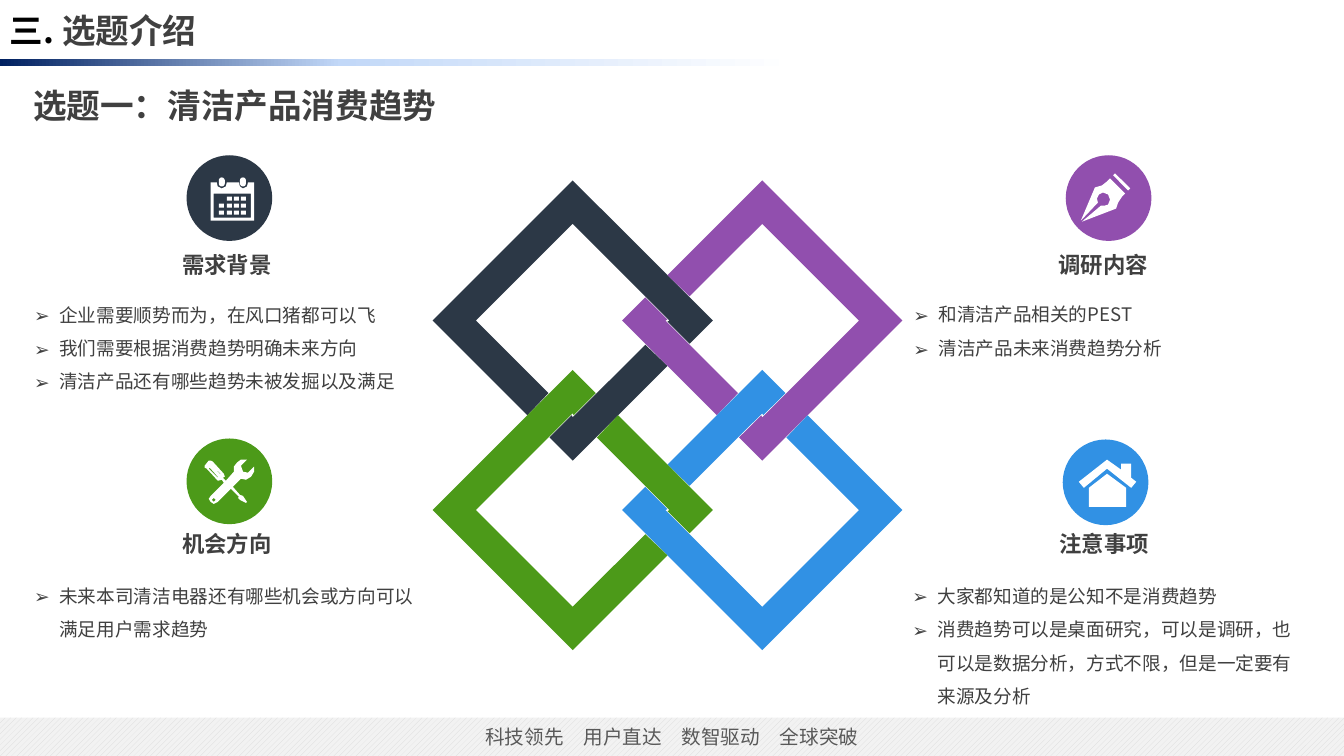
import copy
import lxml.etree
import pptx
import pptx.dml.color
import pptx.enum.dml
import pptx.enum.shapes
import pptx.enum.text
import pptx.oxml.ns
import pptx.util

Inches = pptx.util.Inches
SHAPE = pptx.enum.shapes.MSO_SHAPE
ALIGN = pptx.enum.text.PP_ALIGN
qn = pptx.oxml.ns.qn
FONT = "Noto Sans CJK SC"
COLORS = {
    "navy": "2C3846", "purple": "914FAE", "blue": "3191E4", "green": "4C9A19",
    "white": "FFFFFF", "black": "000000", "text": "404040", "footer": "595959",
    "hatch": "D9D9D9", "footer_bg": "F2F2F2", "bar_dark": "002060", "bar_light": "C2D8F8",
}

# Content
TITLE = [("三. ", "black"), ("选题介绍", "text")]
SUBTITLE = "选题一：清洁产品消费趋势"
FOOTER = "科技领先　用户直达　数智驱动　全球突破"
BAR_STOPS = [(0, "bar_dark"), (43, "bar_light"), (100, "white")]

# Heading, colour, badge (left, top), heading (left, top), list (left, top, height), bullets
TOPICS = [
    ("需求背景", "navy", (1.85, 1.54), (1.71, 2.44), (0.24, 2.85, 1.11),
     ["企业需要顺势而为，在风口猪都可以飞", "我们需要根据消费趋势明确未来方向",
      "清洁产品还有哪些趋势未被发掘以及满足"]),
    ("调研内容", "purple", (10.57, 1.54), (10.4, 2.44), (8.96, 2.85, 0.77),
     ["和清洁产品相关的PEST", "清洁产品未来消费趋势分析"]),
    ("机会方向", "green", (1.85, 4.35), (1.71, 5.21), (0.24, 5.64, 0.77),
     ["未来本司清洁电器还有哪些机会或方向可以满足用户需求趋势"]),
    ("注意事项", "blue", (10.54, 4.36), (10.41, 5.21), (8.95, 5.64, 1.45),
     ["大家都知道的是公知不是消费趋势",
      "消费趋势可以是桌面研究，可以是调研，也可以是数据分析，方式不限，但是一定要有来源及分析"]),
]

# Interlocked diamonds: colour, centre, corner (N, E, S, W = 0..3) where the first gap lies
RINGS = [("navy", (5.68, 3.18), 1), ("purple", (7.56, 3.18), 2),
         ("blue", (7.56, 5.06), 3), ("green", (5.68, 5.06), 0)]
CORNERS = [(0, -1), (1, 0), (0, 1), (-1, 0)]
OUTER, INNER = 1.39, 0.96
# Band ends beside a gap: weights of the two corners for the outer and inner edge
NEAR = [(1.16, 0.23), (0.94, 0.01)]
FAR = [(0.94, 0.45), (0.72, 0.24)]

# Icon outlines, each a list of contours
PEN = [
    [[(11.1, 1.86), (11.07, 1.83), (11.01, 1.77), (10.98, 1.8), (10.93, 1.84), (10.86, 1.86),
      (10.72, 2.19), (10.89, 2.01), (10.88, 1.97), (10.9, 1.93), (10.94, 1.91), (10.99, 1.93),
      (11.01, 1.98), (10.99, 2.03), (10.96, 2.04), (10.92, 2.04), (10.73, 2.2), (11.07, 2.07),
      (11.09, 2.01), (11.13, 1.95), (11.16, 1.92)]],
    [[(11.06, 1.72), (11.21, 1.87), (11.19, 1.89), (11.04, 1.74)]],
]
HOUSE = [
    [[(10.8, 4.84), (10.8, 5.03), (11.17, 5.03), (11.17, 4.84), (10.98, 4.7)]],
    [[(11.22, 4.74), (11.22, 4.6), (11.12, 4.6), (11.12, 4.66), (10.98, 4.56), (10.7, 4.78),
      (10.75, 4.84), (10.98, 4.65), (11.22, 4.84), (11.27, 4.78)]],
]
CALENDAR = [
    [[(2.52, 1.81), (2.46, 1.81), (2.45, 1.85), (2.41, 1.87), (2.38, 1.85), (2.37, 1.81),
      (2.25, 1.81), (2.24, 1.85), (2.2, 1.87), (2.16, 1.85), (2.15, 1.81), (2.09, 1.81),
      (2.09, 2.19), (2.52, 2.19)],
     [(2.49, 2.16), (2.12, 2.16), (2.12, 1.92), (2.49, 1.92)]],
]
TOOLS = [
    [[(2.03, 4.62), (2.07, 4.57), (2.09, 4.57), (2.11, 4.58), (2.22, 4.7), (2.23, 4.73),
      (2.21, 4.74), (2.24, 4.77), (2.32, 4.68), (2.32, 4.63), (2.35, 4.59), (2.39, 4.56),
      (2.45, 4.56), (2.39, 4.62), (2.41, 4.68), (2.46, 4.69), (2.52, 4.63), (2.52, 4.68),
      (2.49, 4.73), (2.44, 4.76), (2.39, 4.75), (2.31, 4.83), (2.38, 4.91), (2.41, 4.92),
      (2.45, 4.98), (2.44, 4.99), (2.38, 4.96), (2.36, 4.94), (2.37, 4.93), (2.29, 4.85),
      (2.16, 4.98), (2.12, 5), (2.09, 4.98), (2.07, 4.95), (2.09, 4.92), (2.22, 4.79),
      (2.2, 4.76), (2.16, 4.77), (2.05, 4.65), (2.03, 4.64)],
     [(2.12, 4.94), (2.1, 4.96), (2.12, 4.98), (2.14, 4.96)],
     [(2.18, 4.7), (2.19, 4.7), (2.1, 4.62)],
     [(2.16, 4.74), (2.16, 4.73), (2.08, 4.64), (2.07, 4.65)]],
]
PIN_LEFTS = [2.17, 2.38]
DAY_LEFTS = [2.17, 2.25, 2.32, 2.39]
DAY_TOPS = [1.95, 2.02, 2.09]

prs = pptx.Presentation()
prs.slide_width, prs.slide_height = Inches(13.33), Inches(7.5)
slide = prs.slides.add_slide(prs.slide_layouts[6])
shapes = slide.shapes


def rgb(name):
    return pptx.dml.color.RGBColor.from_string(COLORS[name])


def style(sp, color=None):
    sp.shadow.inherit = False
    sp.line.fill.background()
    if color:
        sp.fill.solid()
        sp.fill.fore_color.rgb = rgb(color)
    return sp


def add_preset(kind, left, top, width, height, color=None):
    return style(shapes.add_shape(kind, *map(Inches, (left, top, width, height))), color)


def add_outline(contours, color):
    # The builder keeps whole units only, so points go in as EMU
    contours = [[(Inches(x), Inches(y)) for x, y in points] for points in contours]
    fb = shapes.build_freeform(*contours[0][0])
    for i, points in enumerate(contours):
        if i:
            fb.move_to(*points[0])
        fb.add_line_segments(points[1:], close=True)
    return style(fb.convert_to_shape(), color)


def add_run(p, text, size, color, bold=False):
    r = p.add_run()
    r.text = text
    r.font.size, r.font.bold, r.font.name = pptx.util.Pt(size), bold, FONT
    r.font.color.rgb = rgb(color)
    lxml.etree.SubElement(r.font._element, qn("a:ea")).set("typeface", FONT)


def add_text(left, top, width, height, wrap=True):
    tf = shapes.add_textbox(*map(Inches, (left, top, width, height))).text_frame
    tf.word_wrap = wrap
    return tf


def add_bullet(p):
    pPr = p._p.get_or_add_pPr()
    pPr.set("marL", str(Inches(0.25)))
    pPr.set("indent", str(-Inches(0.25)))
    p.line_spacing = 1.5
    lxml.etree.SubElement(pPr, qn("a:buFont")).set("typeface", FONT)
    lxml.etree.SubElement(pPr, qn("a:buChar")).set("char", "➢")


def ring_band(center, start, corners, end):
    """Outline of a band from a gap, round the given corners, to the next gap."""
    def edge(side, radius):
        def gap_point(corner, weights):
            a, b = CORNERS[corner % 4], CORNERS[(corner + 1) % 4]
            return [u * weights[0] + v * weights[1] for u, v in zip(a, b)]
        bends = [[radius * u for u in CORNERS[c % 4]] for c in corners]
        points = [gap_point(start, FAR[side]), *bends, gap_point(end, NEAR[side])]
        return [(center[0] + x, center[1] + y) for x, y in points]
    return edge(0, OUTER) + edge(1, INNER)[::-1]


# Header bar with three-stop gradient
bar = add_preset(SHAPE.RECTANGLE, 0, 0.59, 7.87, 0.07)
bar.fill.gradient()
bar.fill.gradient_angle = 0
stop_list = bar._element.spPr.find(".//" + qn("a:gsLst"))
stop_list.append(copy.deepcopy(stop_list[-1]))
for stop, (position, color) in zip(bar.fill.gradient_stops, BAR_STOPS):
    stop.position = position / 100
    stop.color.rgb = rgb(color)

# Hatched footer
footer = add_preset(SHAPE.RECTANGLE, 0, 7.12, 13.33, 0.38)
footer.fill.patterned()
footer.fill.pattern = pptx.enum.dml.MSO_PATTERN.WIDE_UPWARD_DIAGONAL
footer.fill.fore_color.rgb = rgb("hatch")
footer.fill.back_color.rgb = rgb("footer_bg")
footer.text_frame.vertical_anchor = pptx.enum.text.MSO_ANCHOR.MIDDLE
p = footer.text_frame.paragraphs[0]
p.alignment = ALIGN.CENTER
add_run(p, FOOTER, 14, "footer")

# Titles
tf = add_text(0, 0, 5.99, 0.59)
tf.vertical_anchor = pptx.enum.text.MSO_ANCHOR.MIDDLE
for text, color in TITLE:
    add_run(tf.paragraphs[0], text, 24, color, True)
add_run(add_text(0.23, 0.79, 4.24, 0.5, False).paragraphs[0], SUBTITLE, 24, "text", True)

# Interlocked diamonds
for color, center, k in RINGS:
    add_outline([ring_band(center, k, [k + 1], k + 1),
                 ring_band(center, k + 1, [k + 2, k + 3, k], k)], color)

# Topics: badge, heading, bullets
for heading, color, badge, heading_at, (left, top, height), bullets in TOPICS:
    add_preset(SHAPE.FLOWCHART_CONNECTOR, *badge, 0.85, 0.85, color)
    add_run(add_text(*heading_at, 1.1, 0.37, False).paragraphs[0], heading, 16, "text", True)
    tf = add_text(left, top, 4.05, height)
    for i, text in enumerate(bullets):
        p = tf.add_paragraph() if i else tf.paragraphs[0]
        add_bullet(p)
        add_run(p, text, 13.3, "text")

# Icons
for contours in PEN + HOUSE + CALENDAR + TOOLS:
    add_outline(contours, "white")
for left in PIN_LEFTS:
    pin = add_preset(SHAPE.ROUNDED_RECTANGLE, left, 1.76, 0.06, 0.09, "white")
    pin.adjustments[0] = 0.5
for row, top in enumerate(DAY_TOPS):
    for left in DAY_LEFTS[1 if row == 0 else 0:]:
        add_preset(SHAPE.RECTANGLE, left, top, 0.05, 0.04, "white")

prs.save("out.pptx")
